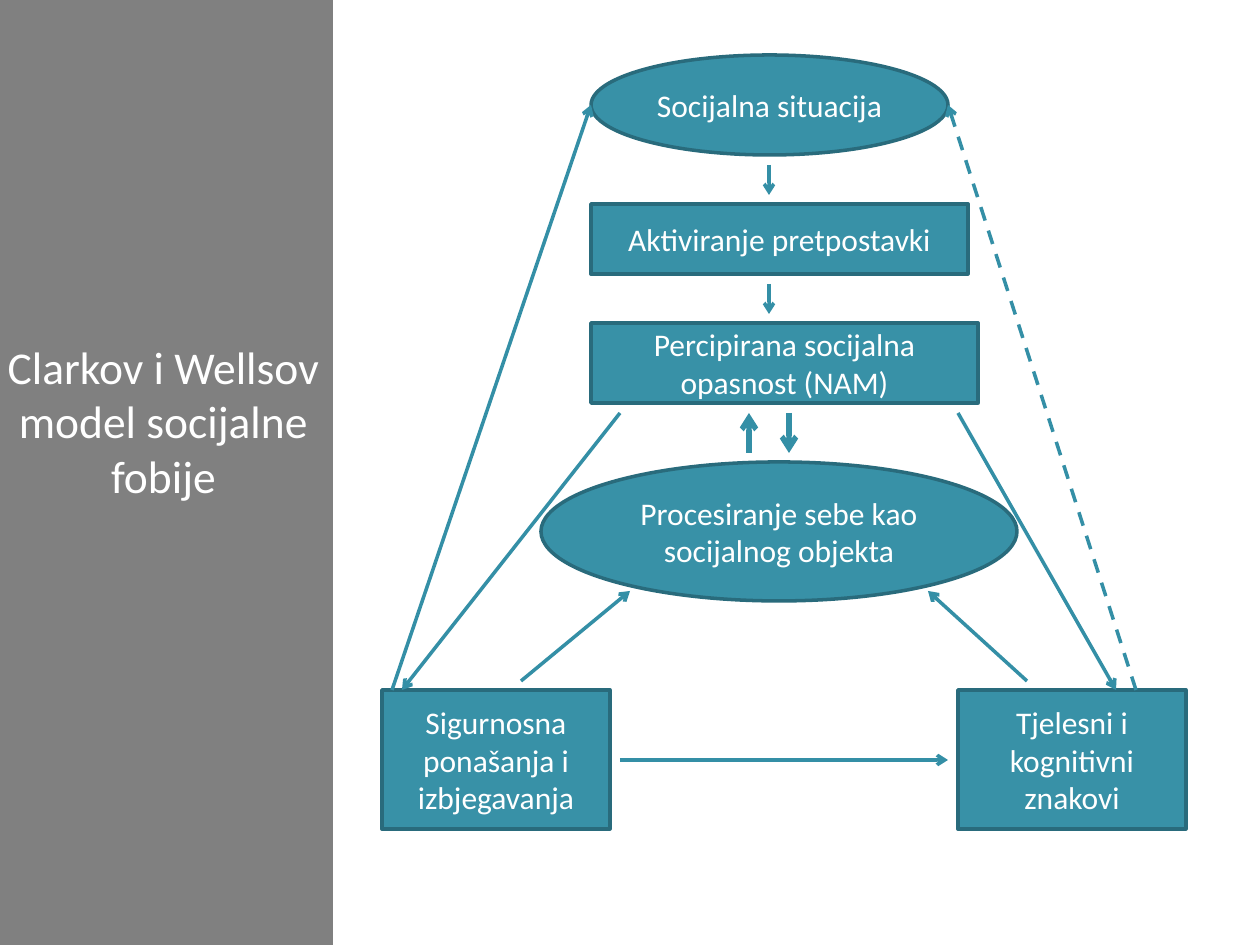
from lxml.etree import SubElement
from pptx import Presentation
from pptx.dml.color import RGBColor
from pptx.enum.dml import MSO_LINE
from pptx.enum.shapes import MSO_CONNECTOR, MSO_SHAPE
from pptx.enum.text import MSO_ANCHOR, MSO_AUTO_SIZE, PP_ALIGN
from pptx.oxml.ns import qn
from pptx.util import Emu, Pt

PX_PER_INCH = 126
FONT = "Calibri"
COLORS = {"panel": "808080", "fill": "3891A7", "border": "296B7C",
          "arrow": "348FA6", "text": "FFFFFF"}

TITLE = "Clarkov i Wellsov model socijalne fobije"
TITLE_BOX = (-6, 0, 339, 945)
TITLE_LIFT = 104  # bottom inset that raises the centred title

OVAL, RECT = MSO_SHAPE.OVAL, MSO_SHAPE.RECTANGLE
NODES = [  # shape, (left, top, width, height), text
    (OVAL, (591, 55, 357, 100), "Socijalna situacija"),
    (RECT, (591, 204, 377, 70), "Aktiviranje pretpostavki"),
    (RECT, (591, 323, 387, 80), "Percipirana socijalna opasnost (NAM)"),
    (OVAL, (541, 462, 476, 139), "Procesiranje sebe kao socijalnog objekta"),
    (RECT, (958, 690, 228, 139), "Tjelesni i kognitivni znakovi"),
    (RECT, (382, 690, 228, 139), "Sigurnosna ponašanja i izbjegavanja"),
]
ARROWS = [  # start, end, width in points, dashed
    ((769, 165), (769, 195), 2, False),
    ((769, 284), (769, 314), 2, False),
    ((789, 413), (789, 453), 3, False),
    ((749, 453), (749, 413), 3, False),
    ((958, 413), (1116, 690), 2, False),
    ((620, 413), (402, 690), 2, False),
    ((620, 760), (948, 760), 2, False),
    ((521, 681), (630, 591), 2, False),
    ((1027, 681), (928, 591), 2, False),
    ((392, 690), (591, 105), 2, False),
    ((1136, 690), (948, 105), 2, True),
]


def px(n):
    return Emu(round(n * 914400 / PX_PER_INCH))


def color(name):
    return RGBColor.from_string(COLORS[name])


def write(sp, text, size):
    tf = sp.text_frame
    tf.word_wrap = True
    tf.auto_size = MSO_AUTO_SIZE.NONE
    tf.vertical_anchor = MSO_ANCHOR.MIDDLE
    tf.text = text
    p = tf.paragraphs[0]
    p.alignment = PP_ALIGN.CENTER
    p.font.name, p.font.size = FONT, Pt(size)
    p.font.color.rgb = color("text")


def fill(sp, name):
    sp.fill.solid()
    sp.fill.fore_color.rgb = color(name)


def add_title(s):
    sp = s.shapes.title
    sp.left, sp.top, sp.width, sp.height = map(px, TITLE_BOX)
    fill(sp, "panel")
    write(sp, TITLE, 26)
    tf = sp.text_frame
    tf.margin_left = tf.margin_right = px(6)
    tf.margin_top, tf.margin_bottom = px(0), px(TITLE_LIFT)


def add_node(s, kind, box, text):
    sp = s.shapes.add_shape(kind, *map(px, box))
    sp.shadow.inherit = False
    fill(sp, "fill")
    sp.line.color.rgb = color("border")
    sp.line.width = Pt(2)
    write(sp, text, 18)


def add_arrow(s, start, end, width, dashed):
    c = s.shapes.add_connector(MSO_CONNECTOR.STRAIGHT,
                               *map(px, start + end))
    c.line.color.rgb = color("arrow")
    c.line.width = Pt(width)
    if dashed:
        c.line.dash_style = MSO_LINE.DASH
    spPr = c._element.spPr
    SubElement(spPr.find(qn("a:ln")), qn("a:tailEnd"), type="arrow")
    SubElement(spPr, qn("a:effectLst"))


def main():
    prs = Presentation()
    prs.slide_width, prs.slide_height = px(1260), px(945)
    s = prs.slides.add_slide(prs.slide_layouts[5])
    add_title(s)
    for node in NODES:
        add_node(s, *node)
    for arrow in ARROWS:
        add_arrow(s, *arrow)
    prs.save("out.pptx")


if __name__ == "__main__":
    main()
